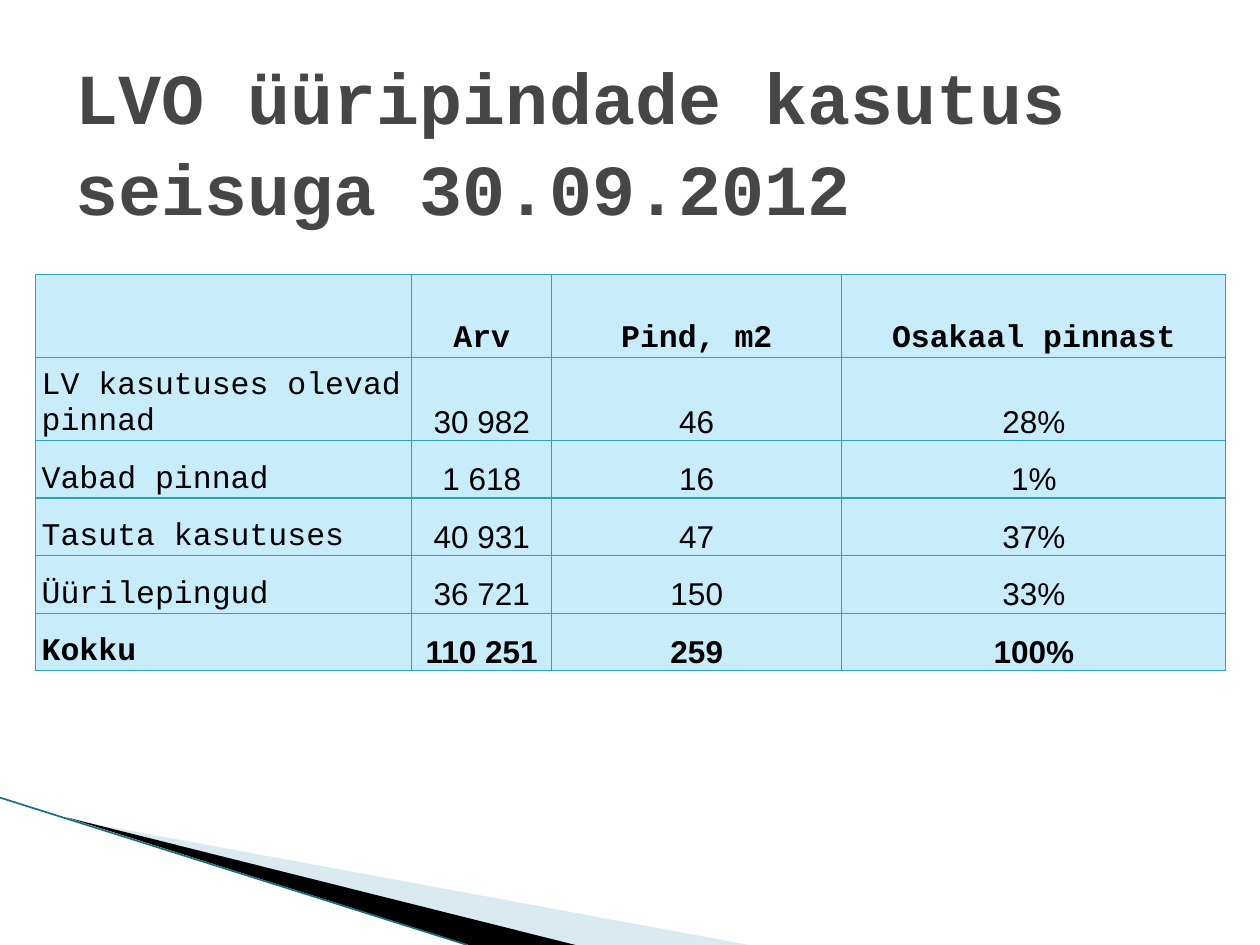
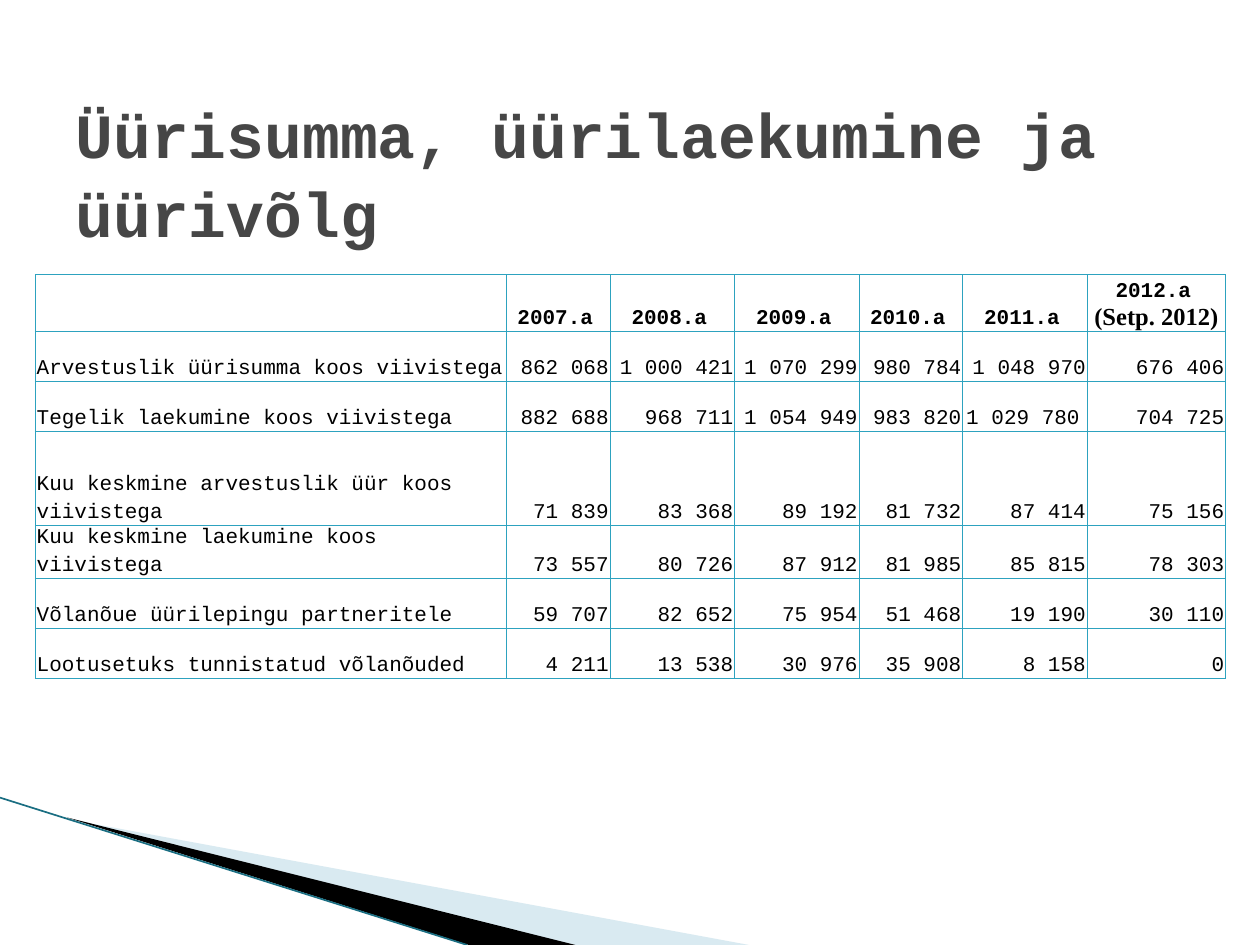
"""Builds two slides about rented premises and rent income."""
from dataclasses import dataclass

from lxml import etree
from pptx import Presentation
from pptx.dml.color import RGBColor
from pptx.enum.shapes import MSO_CONNECTOR
from pptx.enum.text import MSO_ANCHOR, MSO_AUTO_SIZE, PP_ALIGN
from pptx.oxml.ns import qn
from pptx.util import Cm, Pt

LEFT, CENTER, RIGHT = PP_ALIGN.LEFT, PP_ALIGN.CENTER, PP_ALIGN.RIGHT
MIDDLE, BOTTOM = MSO_ANCHOR.MIDDLE, MSO_ANCHOR.BOTTOM
NO_AUTOFIT = MSO_AUTO_SIZE.NONE
STRAIGHT = MSO_CONNECTOR.STRAIGHT
TITLE_ONLY = 5


@dataclass(frozen=True)
class Theme:
    mono: str = "Courier New"
    sans: str = "Arial"
    serif: str = "Times New Roman"
    title: str = "464646"
    text: str = "000000"
    border: str = "2DA2BF"
    cell: str = "C9ECFB"
    pale_wedge: str = "A0CBDC"
    dark_wedge: str = "000000"
    edge: str = "1A6E82"
    large_title: float = 41
    small_title: float = 36
    large_cell: float = 18
    small_cell: float = 12
    note: float = 14


@dataclass(frozen=True)
class CellStyle:
    font: str
    size: float
    bold: bool = False
    align: int = LEFT
    side_margin: float = 0.03


class Deck:
    def __init__(self, theme):
        self.theme = theme
        self.presentation = Presentation()
        self.presentation.slide_width = Cm(25.4)
        self.presentation.slide_height = Cm(19.05)
        self.layout = self.presentation.slide_layouts[TITLE_ONLY]
        self.slide = None

    def add_slide(self):
        self.slide = self.presentation.slides.add_slide(self.layout)

    def style_run(self, run, font, size, bold, color):
        run.font.name = font
        run.font.size = Pt(size)
        run.font.bold = bold
        run.font.color.rgb = RGBColor.from_string(color)

    def title(self, text, size, left, top, height):
        shape = self.slide.shapes.title
        shape.left, shape.top = Cm(left), Cm(top)
        shape.width, shape.height = Cm(22.86), Cm(height)
        frame = shape.text_frame
        frame.text = text
        frame.word_wrap = True
        frame.auto_size = NO_AUTOFIT
        frame.vertical_anchor = MIDDLE
        frame.margin_top = Cm(0.46)
        paragraph = frame.paragraphs[0]
        paragraph.alignment = LEFT
        paragraph.line_spacing = 1.05
        self.style_run(paragraph.runs[0], self.theme.mono, size, True, self.theme.title)

    def wedge(self, points, color, opacity=100):
        corners = [(Cm(x), Cm(y)) for x, y in points]
        builder = self.slide.shapes.build_freeform(*corners[0], scale=1.0)
        builder.add_line_segments(corners[1:], close=True)
        shape = builder.convert_to_shape()
        shape.shadow.inherit = False
        shape.line.fill.background()
        shape.fill.solid()
        shape.fill.fore_color.rgb = RGBColor.from_string(color)
        if opacity < 100:
            fill_color = shape.element.spPr.find(".//" + qn("a:srgbClr"))
            etree.SubElement(fill_color, qn("a:alpha"), val=str(opacity * 1000))
        return shape

    def line(self, start, end, color, width):
        points = [Cm(value) for value in (*start, *end)]
        connector = self.slide.shapes.add_connector(STRAIGHT, *points)
        connector.line.color.rgb = RGBColor.from_string(color)
        connector.line.width = Pt(width)
        etree.SubElement(connector.element.spPr, qn("a:effectLst"))
        return connector

    def corner_band(self):
        shapes = [
            self.wedge([(1.4, 16.52), (15.1, 19.05), (11.58, 19.05)],
                       self.theme.pale_wedge, 40),
            self.wedge([(1.35, 16.48), (11.6, 19.05), (9.45, 19.05)],
                       self.theme.dark_wedge),
            self.line((0, 16.08), (9.42, 19.05), self.theme.edge, 0.95),
        ]
        for number, shape in enumerate(shapes, start=101):
            shape.element.find(".//" + qn("p:cNvPr")).set("id", str(number))
            self.layout.shapes.element.append(shape.element)

    def borders(self, cell, width):
        properties = cell._tc.get_or_add_tcPr()
        for side in ("lnL", "lnR", "lnT", "lnB"):
            line = etree.SubElement(properties, qn("a:" + side), w=str(Pt(width)))
            fill = etree.SubElement(line, qn("a:solidFill"))
            etree.SubElement(fill, qn("a:srgbClr"), val=self.theme.border)

    def fill_cell(self, cell, text, style):
        theme = self.theme
        cell.vertical_anchor = BOTTOM
        cell.margin_left = cell.margin_right = Cm(style.side_margin)
        cell.margin_top = cell.margin_bottom = Cm(0.01)
        cell.text_frame.text = text
        for index, paragraph in enumerate(cell.text_frame.paragraphs):
            paragraph.alignment = style.align
            for run in paragraph.runs:
                font, size = (theme.serif, theme.note) if index else (style.font, style.size)
                has_tail = run.text.endswith(" ")
                run.text = run.text.rstrip(" ")
                self.style_run(run, font, size, style.bold, theme.text)
                if has_tail:
                    tail = paragraph.add_run()
                    tail.text = " "
                    self.style_run(tail, theme.serif, theme.note, style.bold, theme.text)

    def table(self, rows, widths, heights, style_for, border, fill=None):
        frame = self.slide.shapes.add_table(
            len(rows), len(widths), Cm(0.71), Cm(5.54),
            Cm(sum(widths)), Cm(sum(heights)))
        table = frame.table
        table.first_row = table.horz_banding = False
        for column, width in zip(table.columns, widths):
            column.width = Cm(width)
        for row, height in zip(table.rows, heights):
            row.height = Cm(height)
        for row_index, values in enumerate(rows):
            for column_index, text in enumerate(values):
                cell = table.cell(row_index, column_index)
                self.fill_cell(cell, text, style_for(row_index, column_index))
                self.borders(cell, border)
                if fill:
                    cell.fill.solid()
                    cell.fill.fore_color.rgb = RGBColor.from_string(fill)
                else:
                    cell.fill.background()


PREMISES = [
    ["", "Arv", "Pind, m2", "Osakaal pinnast"],
    ["LV kasutuses olevad pinnad", "30 982", "46", "28%"],
    ["Vabad pinnad", "1 618", "16", "1%"],
    ["Tasuta kasutuses", "40 931", "47", "37%"],
    ["Üürilepingud", "36 721", "150", "33%"],
    ["Kokku", "110 251", "259", "100%"],
]

RENT = [
    ["", "2007.a ", "2008.a ", "2009.a ", "2010.a ", "2011.a ", "2012.a \n(Setp. 2012)"],
    ["Arvestuslik üürisumma koos viivistega ",
     "862 068", "1 000 421", "1 070 299", "980 784", "1 048 970", "676 406"],
    ["Tegelik laekumine koos viivistega",
     "882 688", "968 711", "1 054 949", "983 820", "1 029 780 ", "704 725"],
    ["Kuu keskmine arvestuslik üür koos viivistega ",
     "71 839", "83 368", "89 192", "81 732", "87 414", "75 156"],
    ["Kuu keskmine laekumine koos viivistega ",
     "73 557", "80 726", "87 912", "81 985", "85 815", "78 303"],
    ["Võlanõue üürilepingu partneritele ",
     "59 707", "82 652", "75 954", "51 468", "19 190", "30 110"],
    ["Lootusetuks tunnistatud võlanõuded ",
     "4 211", "13 538", "30 976", "35 908", "8 158", "0"],
]


def premises_slide(deck):
    theme = deck.theme

    def style_for(row, column):
        is_number = row > 0 and column > 0
        return CellStyle(
            font=theme.sans if is_number else theme.mono,
            size=theme.large_cell,
            bold=row in (0, len(PREMISES) - 1),
            align=CENTER if column else LEFT,
            side_margin=0.03 if is_number else 0.13)

    deck.title("LVO üüripindade kasutus seisuga 30.09.2012",
               theme.large_title, 1.27, 0.76, 3.76)
    deck.table(PREMISES, [7.59, 2.82, 5.85, 7.74], [1.67] * 2 + [1.16] * 4,
               style_for, 0.75, theme.cell)


def rent_slide(deck):
    theme = deck.theme

    def style_for(row, column):
        value_align = RIGHT if row else CENTER
        return CellStyle(theme.mono, theme.small_cell, bold=row == 0,
                         align=value_align if column else LEFT)

    deck.title("Üürisumma, üürilaekumine ja üürivõlg",
               theme.small_title, 1.27, 2.51, 1.55)
    deck.table(RENT, [9.5, 2.09, 2.51, 2.51, 2.09, 2.51, 2.79],
               [1.01] * 3 + [1.9] + [1.01] * 3, style_for, 0.5)


def main():
    deck = Deck(Theme())
    deck.add_slide()
    deck.corner_band()
    premises_slide(deck)
    deck.add_slide()
    rent_slide(deck)
    deck.presentation.save("out.pptx")


if __name__ == "__main__":
    main()
